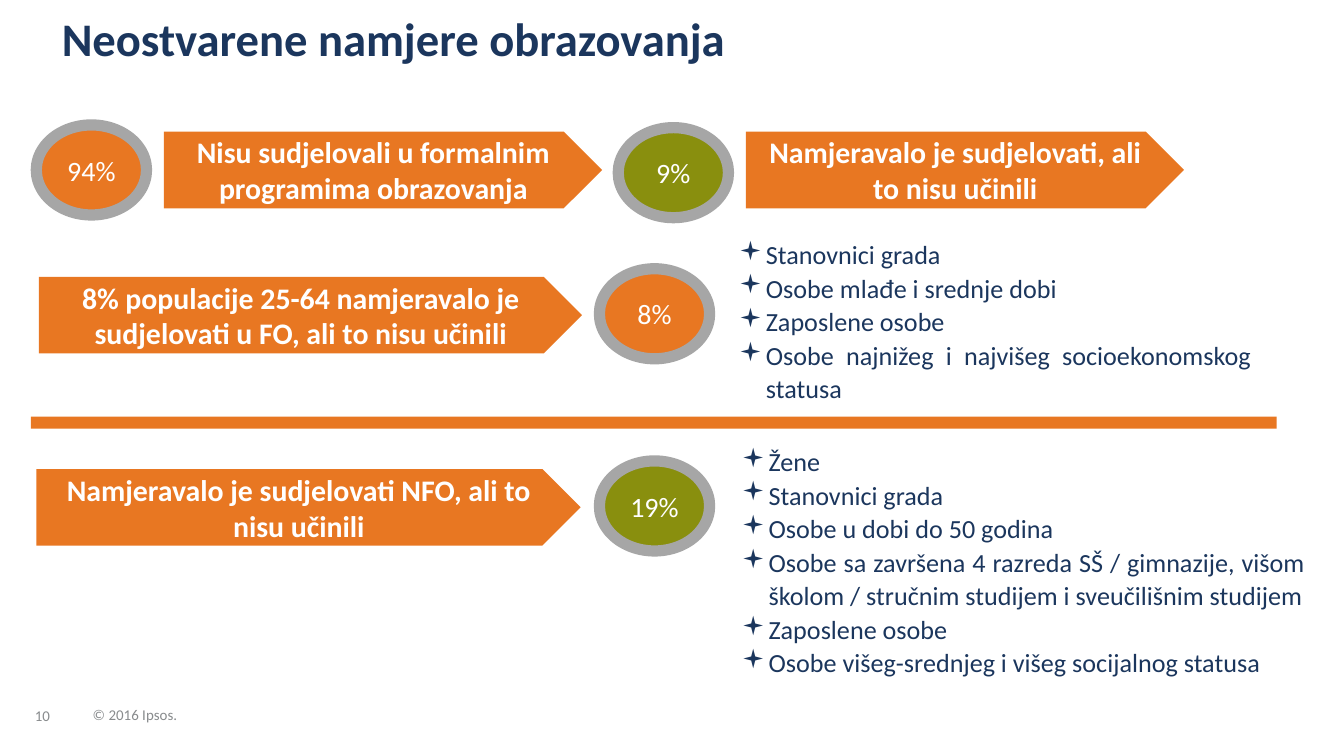
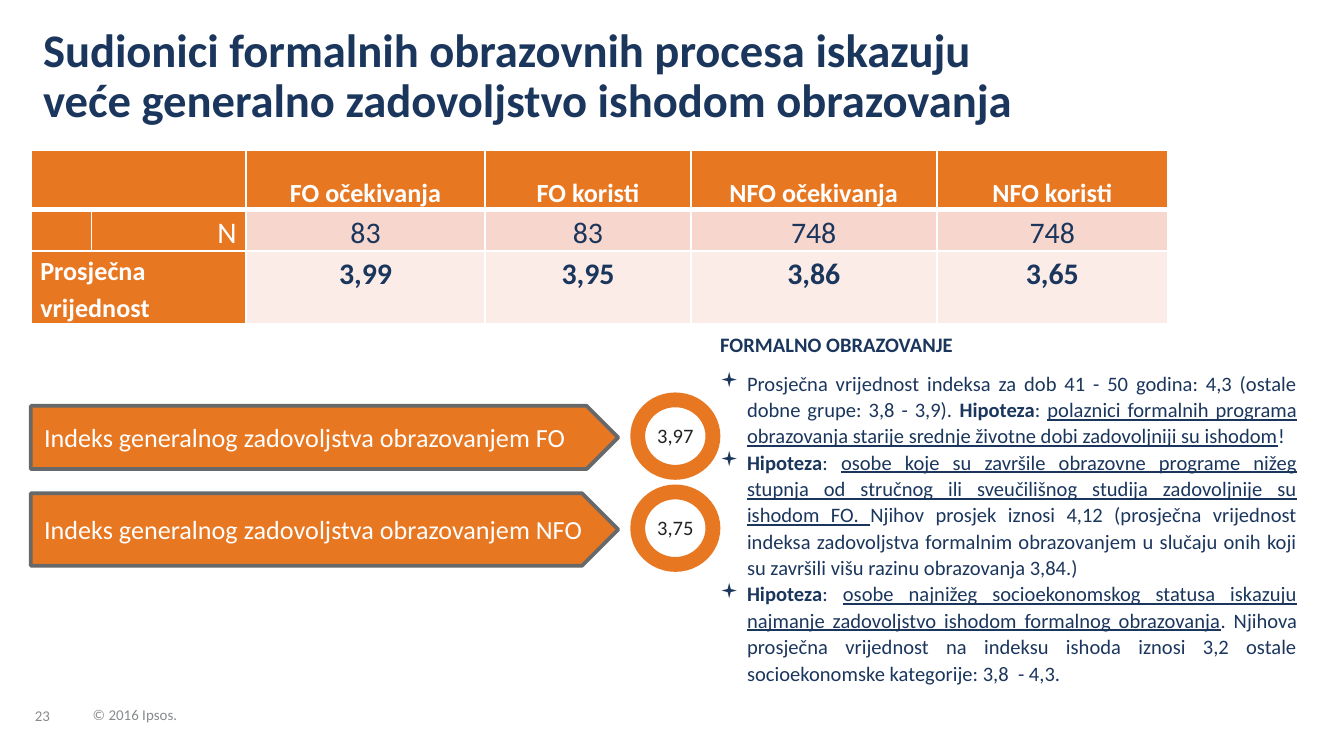
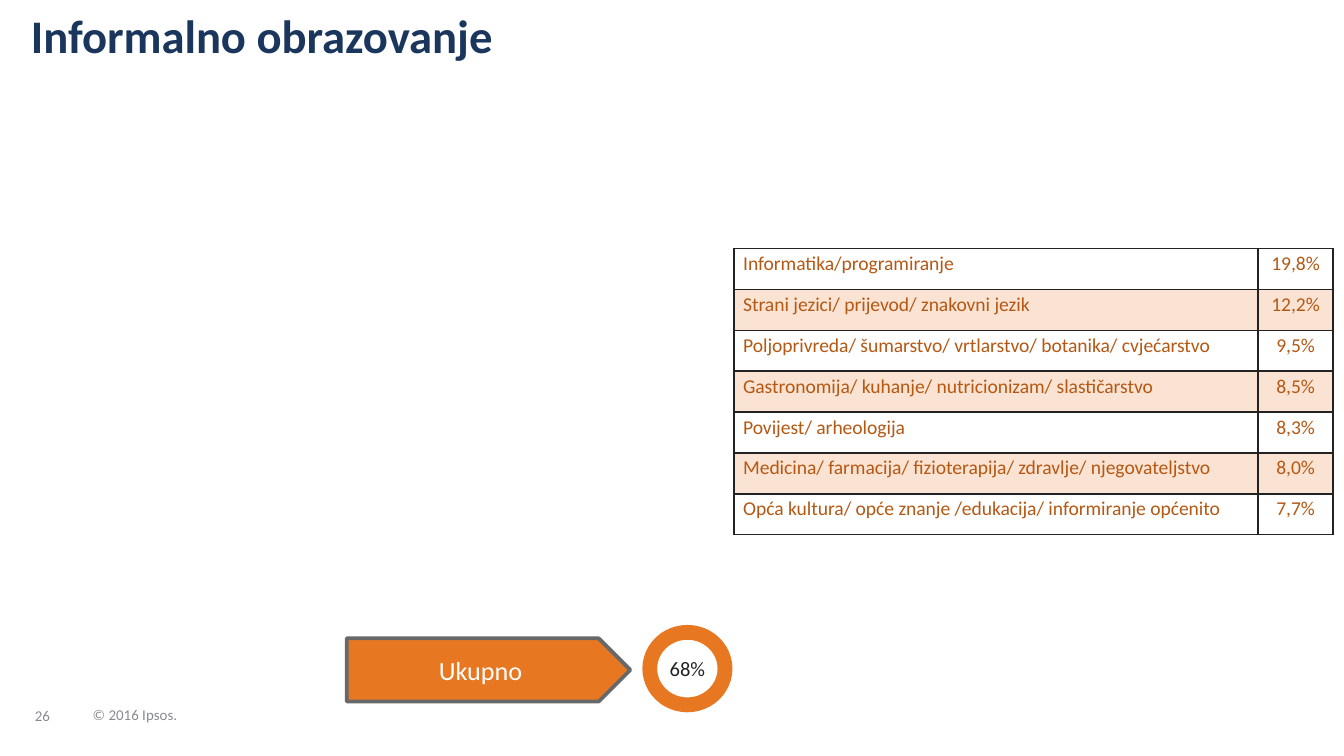
import lxml.etree
import pptx
import pptx.dml.color
import pptx.enum.shapes
import pptx.enum.text
import pptx.oxml.ns
import pptx.util

FONT = "Calibri"
ORANGE, OLIVE, NAVY, WHITE = "E87722", "898F0E", "1B365D", "FFFFFF"
SILVER, SLATE, GREY, INK, RUST = "A6A6A6", "66686A", "888B8D", "222223", "B55813"
BAND_DARK, BAND_LIGHT = "F6D6CD", "FBECE8"
RING_SIZE = (0.67, 0.65)
BADGE_SIZE = (0.82, 0.67)
ALIGN = pptx.enum.text.PP_ALIGN
ANCHOR = pptx.enum.text.MSO_ANCHOR
SHAPE = pptx.enum.shapes.MSO_SHAPE


def rgb(color):
    """Turn a hex string into a colour."""
    return pptx.dml.color.RGBColor.from_string(color)


def inches(box):
    """Convert a box of numbers to lengths."""
    return [pptx.util.Inches(value) for value in box]


def add_xml(parent, tag, **attributes):
    """Append a DrawingML element."""
    return lxml.etree.SubElement(parent, pptx.oxml.ns.qn(tag), attributes)


def style_font(font, size, color, bold=False):
    """Give a font the shared typeface and its own look."""
    font.name, font.size, font.bold = FONT, pptx.util.Pt(size), bold
    font.color.rgb = rgb(color)


def style_text(paragraph, size, color, bold=False, align=ALIGN.LEFT, spacing=1.0):
    """Format a paragraph and all its runs."""
    paragraph.alignment, paragraph.line_spacing = align, spacing
    for run in paragraph.runs:
        style_font(run.font, size, color, bold)


def clear_margins(frame):
    """Remove the insets of a text frame."""
    frame.margin_left = frame.margin_right = frame.margin_top = frame.margin_bottom = 0


def add_label(slide, box, text, size, color, align=ALIGN.LEFT, wrap=True, anchor=ANCHOR.TOP, spacing=1.0):
    """Add one line of text without insets."""
    frame = slide.shapes.add_textbox(*inches(box)).text_frame
    clear_margins(frame)
    frame.word_wrap, frame.vertical_anchor = wrap, anchor
    frame.text = text
    style_text(frame.paragraphs[0], size, color, align=align, spacing=spacing)


def add_slide(deck, title, box, number):
    """Add a slide with its title and footer."""
    slide = deck.slides.add_slide(deck.slide_layouts[5])
    heading = slide.shapes.title
    heading.left, heading.top, heading.width, heading.height = inches(box)
    frame = heading.text_frame
    clear_margins(frame)
    frame.word_wrap, frame.vertical_anchor = True, ANCHOR.TOP
    frame.auto_size = pptx.enum.text.MSO_AUTO_SIZE.NONE
    frame.text = title
    style_text(frame.paragraphs[0], 25, NAVY, True, spacing=0.9)
    frame.paragraphs[0].space_before = 0
    for footer_box, text in (((0.26, 5.13, 0.34, 0.26), number), ((0.69, 5.2, 0.76, 0.18), "© 2016 Ipsos.")):
        add_label(slide, footer_box, text, 8, GREY, wrap=False, anchor=ANCHOR.BOTTOM, spacing=0.85)
    return slide


def add_figure(slide, kind, box, fill, line=None, line_width=0, text="", size=14, bold=False, align=ALIGN.CENTER):
    """Add a filled preset shape with centred text."""
    figure = slide.shapes.add_shape(kind, *inches(box))
    figure.shadow.inherit = False
    figure.fill.solid()
    figure.fill.fore_color.rgb = rgb(fill)
    if line:
        figure.line.color.rgb = rgb(line)
        figure.line.width = pptx.util.Pt(line_width)
    else:
        figure.line.fill.background()
    if text:
        figure.text_frame.text = text
        figure.text_frame.vertical_anchor = ANCHOR.MIDDLE
        style_text(figure.text_frame.paragraphs[0], size, WHITE, bold, align)
    return figure


def add_banner(slide, box, text):
    """Add a bold orange arrow banner."""
    add_figure(slide, SHAPE.PENTAGON, box, ORANGE, text=text, size=16, bold=True)


def add_badge(slide, left, top, text, fill):
    """Add a percentage in a grey-rimmed ellipse."""
    add_figure(slide, SHAPE.OVAL, (left, top, *BADGE_SIZE), fill, SILVER, 6, text, 15)


def add_score(slide, box, text, score, align=ALIGN.LEFT):
    """Add an outlined arrow followed by a ring with a score."""
    left, top, width, height = box
    add_figure(slide, SHAPE.PENTAGON, box, ORANGE, SLATE, 2, text, align=align)
    ring_left, ring_top = left + width + 0.09, top + (height - RING_SIZE[1]) / 2 - 0.01
    ring = add_figure(slide, SHAPE.DONUT, (ring_left, ring_top, *RING_SIZE), ORANGE)
    ring.adjustments[0] = 0.17
    add_label(slide, (ring_left + 0.1, ring_top + 0.23, 0.47, 0.19), score, 11, INK, ALIGN.CENTER)


def add_findings(slide, box, bullets, size, heading=None):
    """Add justified bullets of (text, mark) pieces under an optional heading."""
    frame = slide.shapes.add_textbox(*inches(box)).text_frame
    frame.word_wrap = True
    paragraph = frame.paragraphs[0]
    if heading:
        paragraph.text = heading
        style_text(paragraph, size, NAVY, True, ALIGN.JUSTIFY, 1.07)
        paragraph.space_after = pptx.util.Pt(6.5)
    for index, pieces in enumerate(bullets):
        if heading or index:
            paragraph = frame.add_paragraph()
        properties = paragraph._p.get_or_add_pPr()
        indent = pptx.util.Inches(0.2)
        properties.set("marL", str(indent))
        properties.set("indent", str(-indent))
        add_xml(properties, "a:buFont", typeface="Wingdings", charset="2")
        add_xml(properties, "a:buChar", char="▪")
        paragraph.alignment, paragraph.line_spacing = ALIGN.JUSTIFY, 1.07
        for text, mark in pieces:
            run = paragraph.add_run()
            run.text = text
            style_font(run.font, size, NAVY, mark == "bold")
            run.font.underline = mark == "underline"


def add_grid(slide, box, widths, heights):
    """Add an unstyled table with the given column widths and row heights."""
    table = slide.shapes.add_table(len(heights), len(widths), *inches(box)).table
    table.first_row = table.horz_banding = False
    for column, width in zip(table.columns, inches(widths)):
        column.width = width
    for row, height in zip(table.rows, inches(heights)):
        row.height = height
    return table


def style_cell(cell, text, size, color, border, bold=False, align=ALIGN.LEFT, fill=None, alpha=None, bottom=1):
    """Fill in a cell with its text, borders and background."""
    cell.margin_left = cell.margin_right = pptx.util.Inches(0.07)
    cell.margin_top = cell.margin_bottom = 0
    cell.text = text
    style_text(cell.text_frame.paragraphs[0], size, color, bold, align, 1.15)
    properties = cell._tc.get_or_add_tcPr()
    for side in "LRTB":
        width = pptx.util.Pt(bottom if side == "B" else 1)
        edge = add_xml(properties, f"a:ln{side}", w=str(width))
        add_xml(add_xml(edge, "a:solidFill"), "a:srgbClr", val=border)
    if fill is None:
        cell.fill.background()
        return
    cell.fill.solid()
    cell.fill.fore_color.rgb = rgb(fill)
    if alpha:
        tint = properties.find(pptx.oxml.ns.qn("a:solidFill"))[0]
        add_xml(tint, "a:alpha", val=str(alpha * 1000))


def add_averages(slide, box):
    """Add the table of counts and average values."""
    rows = [
        ("", "", "FO očekivanja", "FO koristi", "NFO očekivanja", "NFO koristi"),
        ("", "N", "83", "83", "748", "748"),
        ("Prosječna vrijednost", "", "3,99", "3,95", "3,86", "3,65"),
    ]
    table = add_grid(slide, box, (0.45, 1.15, 1.78, 1.53, 1.83, 1.72), (0.44, 0.3, 0.54))
    bands = (ORANGE, BAND_DARK, BAND_LIGHT)
    for r, values in enumerate(rows):
        for c, value in enumerate(values):
            stub = c < 2
            header = r == 0
            cell = table.cell(r, c)
            align = ALIGN.CENTER if not stub else ALIGN.RIGHT if c else ALIGN.LEFT
            style_cell(
                cell, value, 14 if header or (stub and r == 2) else 16,
                WHITE if header or stub else NAVY, WHITE, r != 1, align,
                ORANGE if stub else bands[r], bottom=3 if header else 1)
            if header:
                cell.vertical_anchor = ANCHOR.BOTTOM
    for r in (0, 2):
        table.cell(r, 0).merge(table.cell(r, 1))


def add_topics(slide, box):
    """Add the table of topics and their shares."""
    topics = [
        ("Informatika/programiranje", "19,8%"),
        ("Strani jezici/ prijevod/ znakovni jezik", "12,2%"),
        ("Poljoprivreda/ šumarstvo/ vrtlarstvo/ botanika/ cvjećarstvo", "9,5%"),
        ("Gastronomija/ kuhanje/ nutricionizam/ slastičarstvo", "8,5%"),
        ("Povijest/ arheologija", "8,3%"),
        ("Medicina/ farmacija/ fizioterapija/ zdravlje/ njegovateljstvo", "8,0%"),
        ("Opća kultura/ opće znanje /edukacija/ informiranje općenito", "7,7%"),
    ]
    table = add_grid(slide, box, (3.9, 0.56), [box[3] / len(topics)] * len(topics))
    for r, topic in enumerate(topics):
        for c, (value, align) in enumerate(zip(topic, (ALIGN.LEFT, ALIGN.CENTER))):
            style_cell(table.cell(r, c), value, 10.5, RUST, INK, align=align,
                       fill=ORANGE if r % 2 else None, alpha=20)


def build_intentions(deck):
    """Build the slide on unrealised intentions."""
    slide = add_slide(deck, "Neostvarene namjere obrazovanja", (0.46, 0.12, 6.76, 0.38), "10")
    for box, text in (
        ((1.22, 0.98, 3.26, 0.57), "Nisu sudjelovali u formalnim programima obrazovanja"),
        ((5.55, 0.98, 3.26, 0.57), "Namjeravalo je sudjelovati, ali to nisu učinili"),
        ((0.29, 2.06, 4.04, 0.57), "8% populacije 25-64 namjeravalo je sudjelovati u FO, ali to nisu učinili"),
        ((0.27, 3.49, 4.05, 0.57), "Namjeravalo je sudjelovati NFO, ali to nisu učinili"),
    ):
        add_banner(slide, box, text)
    for left, top, share, fill in (
        (0.27, 0.93, "94%", ORANGE), (4.6, 0.95, "9%", OLIVE),
        (4.46, 2, "8%", ORANGE), (4.46, 3.43, "19%", OLIVE),
    ):
        add_badge(slide, left, top, share, fill)
    add_figure(slide, SHAPE.RECTANGLE, (0.23, 3.1, 9.27, 0.09), ORANGE)
    formal = ["Stanovnici grada", "Osobe mlađe i srednje dobi", "Zaposlene osobe",
              "Osobe najnižeg i najvišeg socioekonomskog statusa"]
    nonformal = ["Žene", "Stanovnici grada", "Osobe u dobi do 50 godina",
                 "Osobe sa završena 4 razreda SŠ / gimnazije, višom školom / stručnim studijem i sveučilišnim studijem",
                 "Zaposlene osobe", "Osobe višeg-srednjeg i višeg socijalnog statusa"]
    for box, groups in (((5.4, 1.71, 4.01, 1.35), formal), ((5.42, 3.25, 4.39, 1.85), nonformal)):
        add_findings(slide, box, [[(group, "")] for group in groups], 14)


def build_satisfaction(deck):
    """Build the slide on satisfaction with education."""
    slide = add_slide(
        deck, "Sudionici formalnih obrazovnih procesa iskazuju veće generalno zadovoljstvo ishodom obrazovanja",
        (0.32, 0.2, 7.27, 0.76), "23")
    add_averages(slide, (0.23, 1.12, 8.46, 1.28))
    add_score(slide, (0.23, 3.02, 4.37, 0.47), "Indeks generalnog zadovoljstva obrazovanjem FO", "3,97")
    add_score(slide, (0.23, 3.67, 4.37, 0.54), "Indeks generalnog zadovoljstva obrazovanjem NFO", "3,75")
    hypothesis = [("Hipoteza", "bold"), (": ", "")]
    add_findings(slide, (5.26, 2.41, 4.49, 3.08), [
        [("Prosječna vrijednost indeksa za dob 41 - 50 godina: 4,3 (ostale dobne grupe: 3,8 - 3,9). ", ""),
         *hypothesis,
         ("polaznici formalnih programa obrazovanja starije srednje životne dobi zadovoljniji su ishodom", "underline"),
         ("!", "")],
        [*hypothesis,
         ("osobe koje su završile obrazovne programe nižeg stupnja od stručnog ili sveučilišnog studija "
          "zadovoljnije su ishodom FO. ", "underline"),
         ("Njihov prosjek iznosi 4,12 (prosječna vrijednost indeksa zadovoljstva formalnim obrazovanjem "
          "u slučaju onih koji su završili višu razinu obrazovanja 3,84.)", "")],
        [*hypothesis,
         ("osobe najnižeg socioekonomskog statusa iskazuju najmanje zadovoljstvo ishodom formalnog obrazovanja",
          "underline"),
         (". Njihova prosječna vrijednost na indeksu ishoda iznosi 3,2 ostale socioekonomske kategorije: "
          "3,8  - 4,3.", "")],
    ], 11, "FORMALNO OBRAZOVANJE")


def build_informal(deck):
    """Build the slide on informal education."""
    slide = add_slide(deck, "Informalno obrazovanje", (0.23, 0.1, 7.35, 0.38), "26")
    add_score(slide, (2.58, 4.75, 2.11, 0.47), "Ukupno", "68%", ALIGN.CENTER)
    add_topics(slide, (5.46, 1.85, 4.46, 2.13))


def main():
    """Build and save the presentation."""
    deck = pptx.Presentation()
    deck.slide_width = pptx.util.Inches(10)
    deck.slide_height = deck.slide_width * 9 // 16
    build_intentions(deck)
    build_satisfaction(deck)
    build_informal(deck)
    deck.save("out.pptx")


if __name__ == "__main__":
    main()
